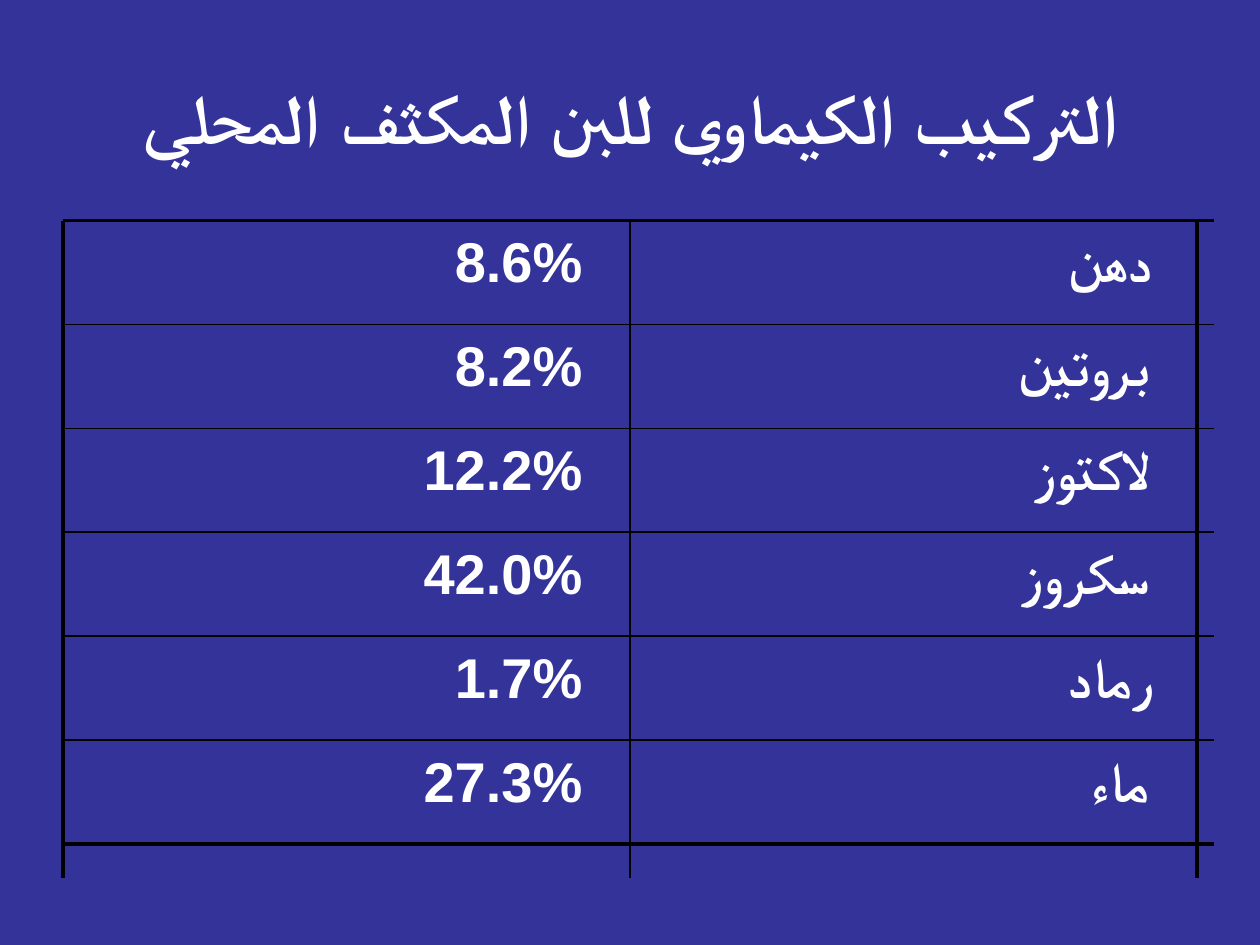
from lxml import etree
from pptx import Presentation
from pptx.dml.color import RGBColor
from pptx.enum.shapes import MSO_CONNECTOR
from pptx.enum.text import MSO_ANCHOR, PP_ALIGN
from pptx.oxml.ns import qn
from pptx.util import Pt

STRAIGHT = MSO_CONNECTOR.STRAIGHT
MIDDLE, TOP = MSO_ANCHOR.MIDDLE, MSO_ANCHOR.TOP
CENTER, RIGHT = PP_ALIGN.CENTER, PP_ALIGN.RIGHT

COLORS = {"background": "333399", "text": "FFFFFF", "rule": "000000"}
FONT = "Arial"
TITLE = "التركيب الكيماوي للبن المكثف المحلي"
COMPOSITION = [
    ("دهن", "8.6%"),
    ("بروتين", "8.2%"),
    ("لاكتوز", "12.2%"),
    ("سكروز", "42.0%"),
    ("رماد", "1.7%"),
    ("ماء", "27.3%"),
]
LEFT, MIDDLE_X, RIGHT_X = 36, 360, 684
GRID_TOP, ROW_HEIGHT = 126, 59.4
RULE_END, COLUMN_END = 694, 502
CELL_WIDTH, CELL_HEIGHT = 304, 42
THICK, THIN = 2.25, 1


def rgb(name):
    return RGBColor.from_string(COLORS[name])


def set_text(sp, text, size, align, anchor):
    tf = sp.text_frame
    frame_format = {
        "word_wrap": True, "vertical_anchor": anchor,
        "margin_left": Pt(7.2), "margin_right": Pt(7.2),
        "margin_top": Pt(3.6), "margin_bottom": Pt(3.6),
    }
    for name, value in frame_format.items():
        setattr(tf, name, value)
    p = tf.paragraphs[0]
    p.alignment = align
    p._p.get_or_add_pPr().set("rtl", "1")
    r = p.add_run()
    r.text = text
    for name, value in {"name": FONT, "size": Pt(size), "bold": True}.items():
        setattr(r.font, name, value)
    r.font.color.rgb = rgb("text")
    etree.SubElement(r.font._element, qn("a:cs")).set("typeface", FONT)


def add_title(slide):
    sp = slide.shapes.title
    box = {"left": 36, "top": 21.6, "width": 648, "height": 90}
    for name, value in box.items():
        setattr(sp, name, Pt(value))
    set_text(sp, TITLE, 40, CENTER, MIDDLE)


def add_cell(shapes, x, y, text):
    sp = shapes.add_textbox(Pt(x), Pt(y), Pt(CELL_WIDTH), Pt(CELL_HEIGHT))
    set_text(sp, text, 32, RIGHT, TOP)


def add_rule(shapes, x1, y1, x2, y2, width):
    sp = shapes.add_connector(STRAIGHT, Pt(x1), Pt(y1), Pt(x2), Pt(y2))
    sp.line.color.rgb = rgb("rule")
    sp.line.width = Pt(width)
    etree.SubElement(sp._element.spPr, qn("a:effectLst"))


def add_grid(shapes):
    for row, (component, share) in enumerate(COMPOSITION):
        y = GRID_TOP + row * ROW_HEIGHT
        add_cell(shapes, MIDDLE_X, y, component)
        add_cell(shapes, LEFT, y, share)
    last = len(COMPOSITION)
    for row in range(last + 1):
        y = GRID_TOP + row * ROW_HEIGHT
        add_rule(shapes, LEFT, y, RULE_END, y, THICK if row in (0, last) else THIN)
    for x, width in ((LEFT, THICK), (MIDDLE_X, THIN), (RIGHT_X, THICK)):
        add_rule(shapes, x, GRID_TOP, x, COLUMN_END, width)


def main():
    prs = Presentation()
    prs.slide_width, prs.slide_height = Pt(720), Pt(540)
    slide = prs.slides.add_slide(prs.slide_layouts[5])
    fill = slide.background.fill
    fill.solid()
    fill.fore_color.rgb = rgb("background")
    add_title(slide)
    add_grid(slide.shapes.add_group_shape().shapes)
    prs.save("out.pptx")


if __name__ == "__main__":
    main()
